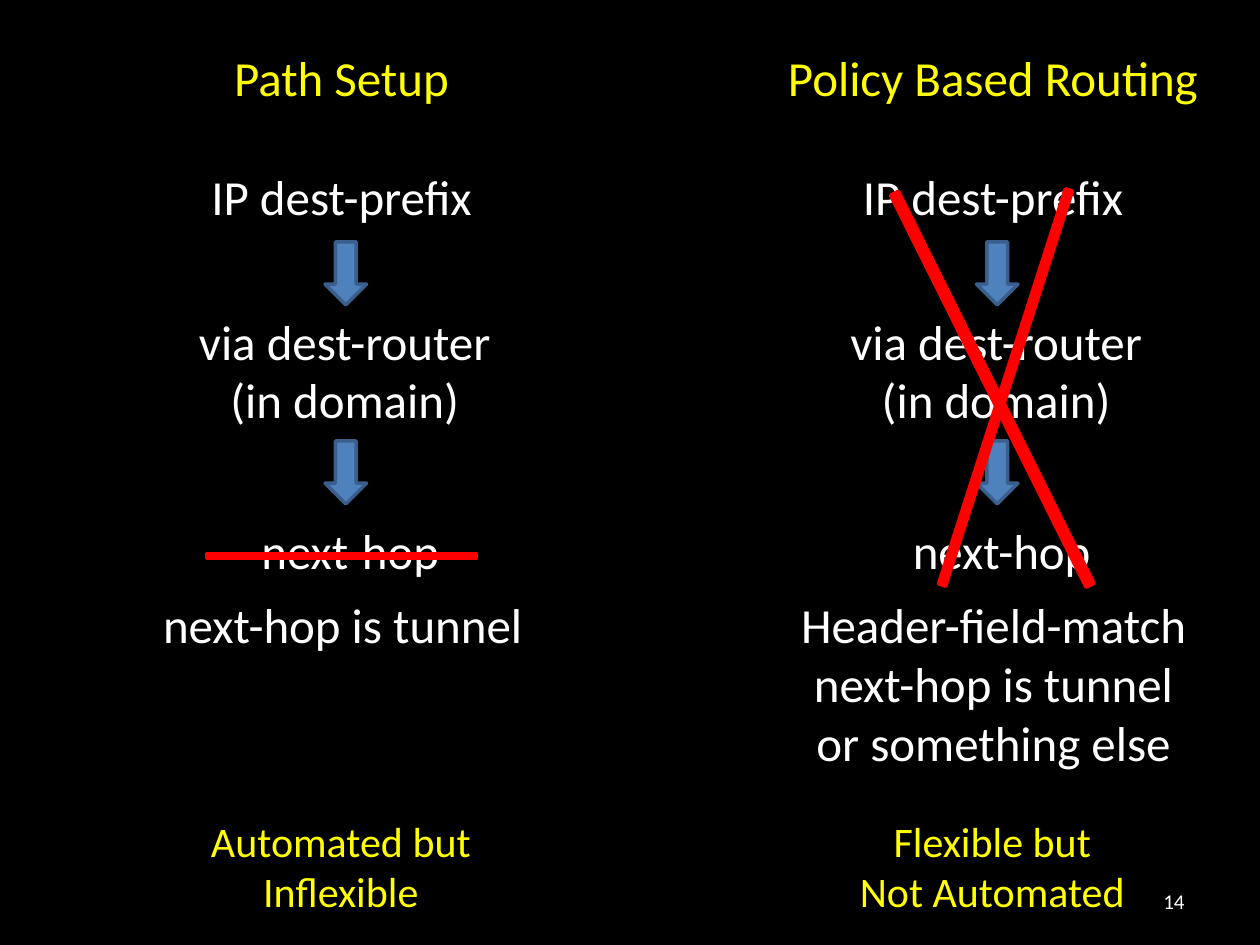
import pptx
import pptx.util
import pptx.dml.color
import pptx.enum.shapes
import pptx.enum.text

Inches = pptx.util.Inches
Pt = pptx.util.Pt
RGBColor = pptx.dml.color.RGBColor
Shape = pptx.enum.shapes.MSO_SHAPE
Align = pptx.enum.text.PP_ALIGN
Anchor = pptx.enum.text.MSO_ANCHOR
AutoSize = pptx.enum.text.MSO_AUTO_SIZE

BLACK = RGBColor(0x00, 0x00, 0x00)
WHITE = RGBColor(0xFF, 0xFF, 0xFF)
YELLOW = RGBColor(0xFF, 0xFF, 0x00)
RED = RGBColor(0xFF, 0x00, 0x00)
BLUE = RGBColor(0x4F, 0x81, 0xBD)
DARK_BLUE = RGBColor(0x3A, 0x5F, 0x8C)

FONT = "Calibri"
COLUMN_STEP = 5.17


def add_text(slide, box, lines, size=28, color=WHITE, align=Align.CENTER, wrap=False):
    shape = slide.shapes.add_textbox(*map(Inches, box))
    frame = shape.text_frame
    frame.word_wrap = wrap
    frame.auto_size = AutoSize.SHAPE_TO_FIT_TEXT
    frame.text = "\n".join(lines)
    for paragraph in frame.paragraphs:
        paragraph.alignment = align
        paragraph.font.name = FONT
        paragraph.font.size = Pt(size)
        paragraph.font.color.rgb = color
    return frame


def add_preset(slide, preset, box, fill, line, rotation=0):
    shape = slide.shapes.add_shape(preset, *map(Inches, box))
    shape.shadow.inherit = False
    shape.fill.solid()
    shape.fill.fore_color.rgb = fill
    shape.line.color.rgb = line
    shape.line.width = Pt(2)
    shape.rotation = rotation


def add_strike(slide, box, rotation=0):
    add_preset(slide, Shape.MATH_MINUS, box, RED, RED, rotation)


def add_lookup_column(slide, offset, title):
    heading = add_text(slide, (0.75 + offset, 0.33, 3.92, 1.51),
                       [title, "IP dest-prefix"], wrap=True)
    title_line, prefix_line = heading.paragraphs
    title_line.font.color.rgb = YELLOW
    prefix_line.space_before = Pt(34)

    for top in (1.92, 3.5):
        add_preset(slide, Shape.DOWN_ARROW, (2.58 + offset, top, 0.33, 0.5), BLUE, DARK_BLUE)
    add_text(slide, (1.46 + offset, 2.42, 2.55, 1.04), ["via dest-router", "(in domain)"])
    add_text(slide, (1.96 + offset, 4.08, 1.64, 0.57), ["next-hop"])


def add_verdict(slide, offset, lines):
    add_text(slide, (1.33 + offset, 6.42, 2.75, 0.91), lines,
             size=24, color=YELLOW, wrap=True)


def add_page_number(slide, number):
    frame = add_text(slide, (7.17, 6.95, 2.33, 0.4), [number],
                     size=12, align=Align.RIGHT, wrap=True)
    frame.auto_size = AutoSize.NONE
    frame.vertical_anchor = Anchor.MIDDLE


def main():
    presentation = pptx.Presentation()
    presentation.slide_width = Inches(10)
    presentation.slide_height = Inches(7.5)
    slide = presentation.slides.add_slide(presentation.slide_layouts[6])
    slide.background.fill.solid()
    slide.background.fill.fore_color.rgb = BLACK

    add_lookup_column(slide, 0, "Path Setup")
    add_strike(slide, (1.25, 4.33, 2.92, 0.17))
    add_text(slide, (1.17, 4.67, 3.1, 0.57), ["next-hop is tunnel"])
    add_verdict(slide, 0, ["Automated but Inflexible"])

    add_lookup_column(slide, COLUMN_STEP, "Policy Based Routing")
    add_strike(slide, (5.51, 2.94, 4.73, 0.3), 63.5)
    add_text(slide, (6.23, 4.67, 3.31, 1.51),
             ["Header-field-match", "next-hop is tunnel", "or something else"])
    add_verdict(slide, COLUMN_STEP, ["Flexible but", "Not Automated"])
    add_strike(slide, (5.74, 2.95, 4.48, 0.25), 287.8)

    add_page_number(slide, "14")
    presentation.save("out.pptx")


if __name__ == "__main__":
    main()
